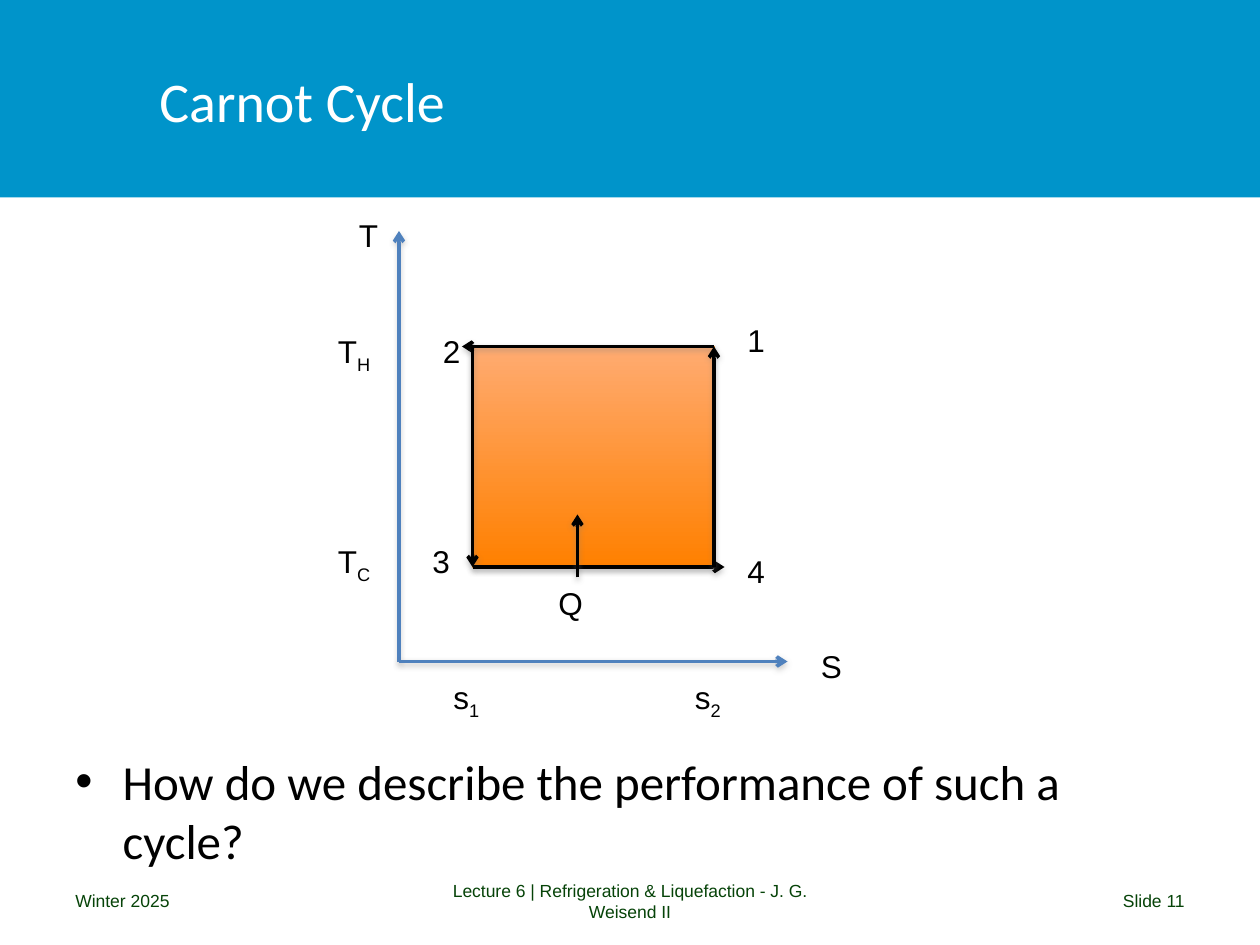
from dataclasses import dataclass
from typing import NamedTuple

import pptx
import pptx.dml.color
import pptx.enum.shapes
import pptx.enum.text
import pptx.oxml
import pptx.oxml.ns
import pptx.util

Align = pptx.enum.text.PP_ALIGN
Anchor = pptx.enum.text.MSO_ANCHOR
COLUMNS, ROWS = 120, 90


@dataclass(frozen=True)
class Theme:
    banner: str = "0094CA"
    white: str = "FFFFFF"
    black: str = "000000"
    footer: str = "064308"
    axis: str = "4F81BD"
    area_top: str = "FFAB71"
    area_bottom: str = "FF8000"
    area_line: str = "F07C03"
    shadow: str = "808080"
    heading_font: str = "Calibri"
    label_font: str = "Arial"
    title_size: int = 32
    body_size: int = 28
    label_size: int = 18
    footer_size: int = 10


class Box(NamedTuple):
    column: float
    row: float
    columns: float
    rows: float


class Label(NamedTuple):
    text: str
    column: float
    row: float
    columns: float = 4
    subscript: str = ""


class Arrow(NamedTuple):
    start: tuple[float, float]
    end: tuple[float, float]
    color: str


THEME = Theme()
LEFT, RIGHT, TOP, BOTTOM = 45, 68, 33, 54
ORIGIN = (38, 63)

ARROWS = [
    Arrow(ORIGIN, (38, 22), THEME.axis),
    Arrow(ORIGIN, (75, 63), THEME.axis),
    Arrow((RIGHT, TOP), (LEFT - 1, TOP), THEME.black),
    Arrow((LEFT, TOP), (LEFT, BOTTOM), THEME.black),
    Arrow((LEFT, BOTTOM), (RIGHT + 1, BOTTOM), THEME.black),
    Arrow((RIGHT, BOTTOM), (RIGHT, TOP), THEME.black),
    Arrow((55, 55), (55, 49), THEME.black),
]

LABELS = [
    Label("T", 33, 20),
    Label("S", 77, 61),
    Label("1", 70, 30),
    Label("2", 41, 31),
    Label("3", 40, 51),
    Label("4", 70, 52),
    Label("T", 31, 31, 6, "H"),
    Label("T", 31, 51, 6, "C"),
    Label("Q", 52, 55, 5),
    Label("s", 42, 64, 5, "1"),
    Label("s", 65, 64, 5, "2"),
]

FOOTERS = [
    ("Winter 2025", Box(6, 83.4, 28, 4.8), Align.LEFT),
    ("Lecture 6 | Refrigeration & Liquefaction - J. G. Weisend II", Box(41, 83.4, 38, 4.8), Align.CENTER),
    ("Slide 11", Box(86, 83.4, 28, 4.8), Align.RIGHT),
]


def grid(units: float) -> int:
    return pptx.util.Inches(units / 12)


def rgb(color: str) -> pptx.dml.color.RGBColor:
    return pptx.dml.color.RGBColor.from_string(color)


def add_child(parent, xml: str):
    name, rest = xml.split(" ", 1)
    element = pptx.oxml.parse_xml(f"<a:{name} {pptx.oxml.ns.nsdecls('a')} {rest}")
    parent.append(element)
    return element


def add_shadow(shape, distance: float, opacity: int) -> None:
    properties = shape.element.spPr
    for effects in properties.findall(pptx.oxml.ns.qn("a:effectLst")):
        properties.remove(effects)
    effects = add_child(properties, "effectLst />")
    add_child(
        effects,
        f'outerShdw blurRad="{pptx.util.Pt(3.1)}" dist="{pptx.util.Pt(distance)}" dir="5400000" rotWithShape="0">'
        f'<a:srgbClr val="{THEME.shadow}"><a:alpha val="{opacity * 1000}"/></a:srgbClr></a:outerShdw>',
    )


def add_rectangle(slide, box: Box):
    shape = slide.shapes.add_shape(pptx.enum.shapes.MSO_SHAPE.RECTANGLE, *map(grid, box))
    shape.shadow.inherit = False
    return shape


def add_banner(slide) -> None:
    banner = add_rectangle(slide, Box(0, 0, COLUMNS, 18.8))
    banner.fill.solid()
    banner.fill.fore_color.rgb = rgb(THEME.banner)
    banner.line.fill.background()


def add_cycle_area(slide) -> None:
    area = add_rectangle(slide, Box(LEFT, TOP, RIGHT - LEFT, BOTTOM - TOP))
    area.fill.gradient()
    area.fill.gradient_angle = 270
    for stop, color in zip(area.fill.gradient_stops, (THEME.area_top, THEME.area_bottom)):
        stop.color.rgb = rgb(color)
    area.line.color.rgb = rgb(THEME.area_line)
    area.line.width = pptx.util.Pt(0.75)
    add_shadow(area, 1.8, 35)


def add_arrow(slide, arrow: Arrow) -> None:
    connector = slide.shapes.add_connector(
        pptx.enum.shapes.MSO_CONNECTOR.STRAIGHT, *map(grid, arrow.start + arrow.end)
    )
    connector.line.color.rgb = rgb(arrow.color)
    connector.line.width = pptx.util.Pt(2)
    add_child(connector.line._get_or_add_ln(), 'tailEnd type="arrow"/>')
    add_shadow(connector, 1.6, 38)


def add_text(slide, text: str, box: Box, *, size: int, color: str = THEME.black,
             font: str = THEME.label_font, align=Align.LEFT, anchor=Anchor.TOP,
             wrap: bool = True, bullet: bool = False, subscript: str = "") -> None:
    frame = slide.shapes.add_textbox(*map(grid, box)).text_frame
    frame.word_wrap = wrap
    frame.vertical_anchor = anchor
    paragraph = frame.paragraphs[0]
    paragraph.alignment = align
    if bullet:
        properties = paragraph._p.get_or_add_pPr()
        properties.set("marL", str(grid(4.5)))
        properties.set("indent", str(grid(-4.5)))
        add_child(properties, 'buFont typeface="Arial"/>')
        add_child(properties, 'buChar char="•"/>')
    paragraph.font.size = pptx.util.Pt(size)
    for part in filter(None, (text, subscript)):
        run = paragraph.add_run()
        run.text = part
        run.font.name = font
        run.font.size = pptx.util.Pt(size)
        run.font.color.rgb = rgb(color)
    if subscript:
        run.font._element.set("baseline", "-25000")


def main() -> None:
    presentation = pptx.Presentation()
    presentation.slide_width, presentation.slide_height = grid(COLUMNS), grid(ROWS)
    slide = presentation.slides.add_slide(presentation.slide_layouts[6])
    add_banner(slide)
    add_text(slide, "Carnot Cycle", Box(14, 2, 94, 15), size=THEME.title_size,
             color=THEME.white, font=THEME.heading_font, anchor=Anchor.MIDDLE)
    add_text(slide, "How do we describe the performance of such a cycle?", Box(6, 71, 108, 12),
             size=THEME.body_size, font=THEME.heading_font, bullet=True)
    for text, box, align in FOOTERS:
        add_text(slide, text, box, size=THEME.footer_size, color=THEME.footer,
                 align=align, anchor=Anchor.MIDDLE)
    add_cycle_area(slide)
    for arrow in ARROWS:
        add_arrow(slide, arrow)
    for label in LABELS:
        add_text(slide, label.text, Box(label.column, label.row, label.columns, 4.8),
                 size=THEME.label_size, wrap=False, subscript=label.subscript)
    presentation.save("out.pptx")


if __name__ == "__main__":
    main()
